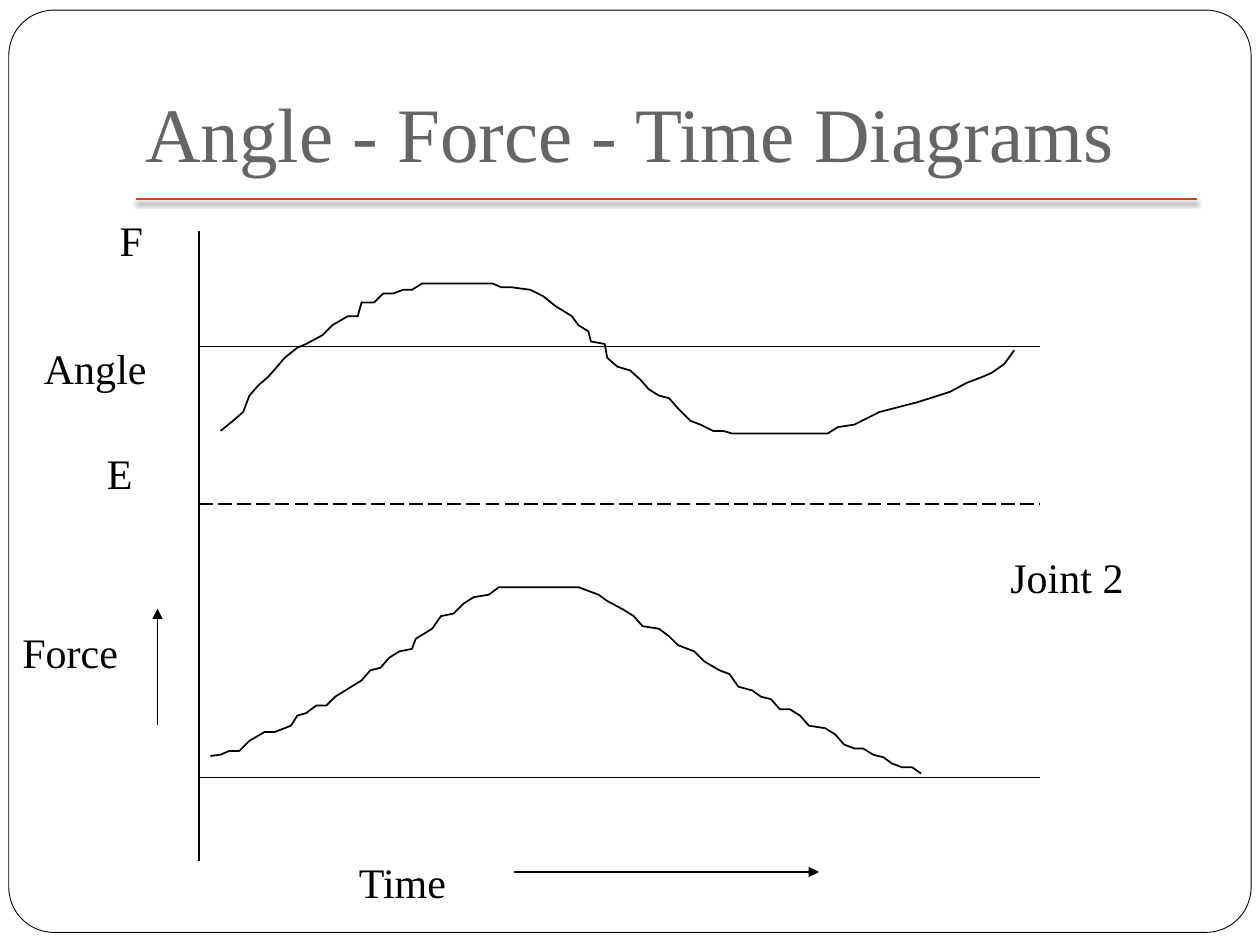
from lxml.etree import SubElement
from pptx import Presentation
from pptx.dml.color import RGBColor
from pptx.enum.dml import MSO_LINE
from pptx.enum.shapes import MSO_CONNECTOR, MSO_SHAPE
from pptx.enum.text import MSO_ANCHOR, PP_ALIGN
from pptx.oxml.ns import qn
from pptx.util import Inches, Pt

BLACK = RGBColor(0x00, 0x00, 0x00)
WHITE = RGBColor(0xFF, 0xFF, 0xFF)
GRAY = RGBColor(0x69, 0x64, 0x64)
ORANGE = RGBColor(0xD3, 0x48, 0x17)
FONT = "Times New Roman"

TITLE = "Angle - Force - Time Diagrams"
AXIS_X, AXIS_END = 1.58, 8.25
AXIS_TOP, AXIS_BOTTOM = 1.83, 6.83
ANGLE_ZERO, DIVIDER, FORCE_ZERO = 2.75, 4, 6.17
LABEL_HEIGHT = 0.5

# text, left, top, width, wraps
LABELS = [
    ("Joint 2", 7.92, 4.33, 1.68, True),
    ("F", 0.85, 1.65, 0.39, False),
    ("E", 0.75, 3.5, 0.59, True),
    ("Angle", 0.25, 2.67, 1.09, True),
    ("Force", 0.08, 4.92, 1.26, True),
    ("Time", 2.75, 6.75, 4.59, True),
]

ANGLE_CURVE = [
    (1.75, 3.42), (1.85, 3.34), (1.93, 3.27), (1.98, 3.14), (2.05, 3.06),
    (2.13, 2.99), (2.2, 2.91), (2.26, 2.84), (2.36, 2.76), (2.43, 2.73),
    (2.56, 2.66), (2.64, 2.58), (2.76, 2.51), (2.84, 2.51), (2.87, 2.4),
    (2.97, 2.4), (3.04, 2.33), (3.12, 2.33), (3.2, 2.3), (3.27, 2.3),
    (3.35, 2.25), (3.91, 2.25), (3.98, 2.28), (4.06, 2.28), (4.21, 2.3),
    (4.31, 2.35), (4.41, 2.43), (4.54, 2.51), (4.59, 2.58), (4.67, 2.63),
    (4.69, 2.71), (4.8, 2.73), (4.82, 2.84), (4.9, 2.91), (5, 2.94),
    (5.08, 3.01), (5.15, 3.09), (5.23, 3.14), (5.31, 3.16), (5.38, 3.24),
    (5.48, 3.34), (5.56, 3.37), (5.66, 3.42), (5.74, 3.42), (5.81, 3.44),
    (6.57, 3.44), (6.65, 3.39), (6.78, 3.37), (6.98, 3.27), (7.29, 3.19),
    (7.54, 3.11), (7.67, 3.04), (7.8, 2.99), (7.87, 2.96), (7.97, 2.89),
    (8.05, 2.78),
]
FORCE_CURVE = [
    (1.67, 6), (1.75, 5.99), (1.82, 5.96), (1.9, 5.96), (1.98, 5.88),
    (2.1, 5.81), (2.18, 5.81), (2.31, 5.76), (2.36, 5.68), (2.43, 5.66),
    (2.51, 5.6), (2.59, 5.6), (2.66, 5.53), (2.79, 5.45), (2.87, 5.4),
    (2.94, 5.32), (3.02, 5.3), (3.09, 5.22), (3.17, 5.17), (3.27, 5.15),
    (3.3, 5.07), (3.43, 4.99), (3.5, 4.89), (3.6, 4.87), (3.68, 4.79),
    (3.76, 4.74), (3.88, 4.72), (3.96, 4.66), (4.59, 4.66), (4.67, 4.69),
    (4.75, 4.72), (4.82, 4.77), (4.95, 4.84), (5.03, 4.89), (5.1, 4.97),
    (5.23, 4.99), (5.31, 5.05), (5.38, 5.12), (5.51, 5.17), (5.59, 5.25),
    (5.71, 5.32), (5.79, 5.35), (5.86, 5.45), (5.97, 5.48), (6.04, 5.53),
    (6.12, 5.55), (6.19, 5.63), (6.27, 5.63), (6.35, 5.68), (6.42, 5.76),
    (6.55, 5.78), (6.63, 5.83), (6.7, 5.91), (6.78, 5.94), (6.85, 5.94),
    (6.93, 5.99), (7.01, 6.01), (7.08, 6.06), (7.16, 6.09), (7.24, 6.09),
    (7.31, 6.14),
]


def write(frame, text, size, color, **paragraph_format):
    frame.text = text
    paragraph = frame.paragraphs[0]
    for name, value in paragraph_format.items():
        setattr(paragraph, name, value)
    for name, value in {"name": FONT, "size": Pt(size)}.items():
        setattr(paragraph.font, name, value)
    paragraph.font.color.rgb = color


def add_line(slide, start, end, color=BLACK, dash=None, arrow=False):
    """Draw a 1 pt line without shadow and return its effect list."""
    connector = slide.shapes.add_connector(
        MSO_CONNECTOR.STRAIGHT, *(Inches(v) for v in (*start, *end)))
    connector.line.color.rgb = color
    connector.line.width = Pt(1)
    if dash:
        connector.line.dash_style = dash
    if arrow:
        SubElement(connector.line._get_or_add_ln(), qn("a:tailEnd"), type="triangle")
    return SubElement(connector._element.spPr, qn("a:effectLst"))


def add_curve(slide, points):
    start, *rest = [(Inches(x), Inches(y)) for x, y in points]
    builder = slide.shapes.build_freeform(*start)
    builder.add_line_segments(rest, close=False)
    curve = builder.convert_to_shape()
    curve.shadow.inherit = False
    curve.fill.background()
    curve.line.color.rgb = BLACK
    curve.line.width = Pt(1)


def add_frame(slide):
    """Put the rounded page border behind everything else."""
    border = slide.shapes.add_shape(
        MSO_SHAPE.ROUNDED_RECTANGLE, *map(Inches, (0.07, 0.08, 9.86, 7.32)))
    border.adjustments[0] = 0.049
    border.shadow.inherit = False
    border.fill.solid()
    border.fill.fore_color.rgb = WHITE
    border.line.color.rgb = BLACK
    border.line.width = Pt(0.5)
    slide.shapes._spTree.insert(2, border._element)


def add_title(slide):
    title = slide.shapes.title
    box = {"left": 0.75, "top": 0.42, "width": 8.5, "height": 1.25}
    for name, value in box.items():
        setattr(title, name, Inches(value))
    title.text_frame.vertical_anchor = MSO_ANCHOR.MIDDLE
    write(title.text_frame, TITLE, 44, GRAY, alignment=PP_ALIGN.CENTER)
    effects = add_line(slide, (1.08, 1.58), (9.5, 1.58), ORANGE)
    shadow = SubElement(effects, qn("a:outerShdw"), blurRad=str(Pt(3)),
                        dist=str(Pt(2)), dir=str(90 * 60000), rotWithShape="0")
    shade = SubElement(shadow, qn("a:srgbClr"), val=str(BLACK))
    SubElement(shade, qn("a:alpha"), val="50000")


def main():
    deck = Presentation()
    deck.slide_width, deck.slide_height = Inches(10), Inches(7.5)
    slide = deck.slides.add_slide(deck.slide_layouts[5])

    add_frame(slide)
    add_title(slide)

    add_line(slide, (AXIS_X, AXIS_TOP), (AXIS_X, AXIS_BOTTOM))
    for y, dash in ((ANGLE_ZERO, None), (FORCE_ZERO, None), (DIVIDER, MSO_LINE.LONG_DASH)):
        add_line(slide, (AXIS_X, y), (AXIS_END, y), dash=dash)
    for curve in (ANGLE_CURVE, FORCE_CURVE):
        add_curve(slide, curve)

    for text, left, top, width, wraps in LABELS:
        label = slide.shapes.add_textbox(
            *map(Inches, (left, top, width, LABEL_HEIGHT))).text_frame
        label.word_wrap = wraps
        write(label, text, 24, BLACK)

    add_line(slide, (4.08, 6.92), (6.5, 6.92), arrow=True)
    add_line(slide, (1.25, 5.75), (1.25, 4.83), arrow=True)
    deck.save("out.pptx")


if __name__ == "__main__":
    main()
